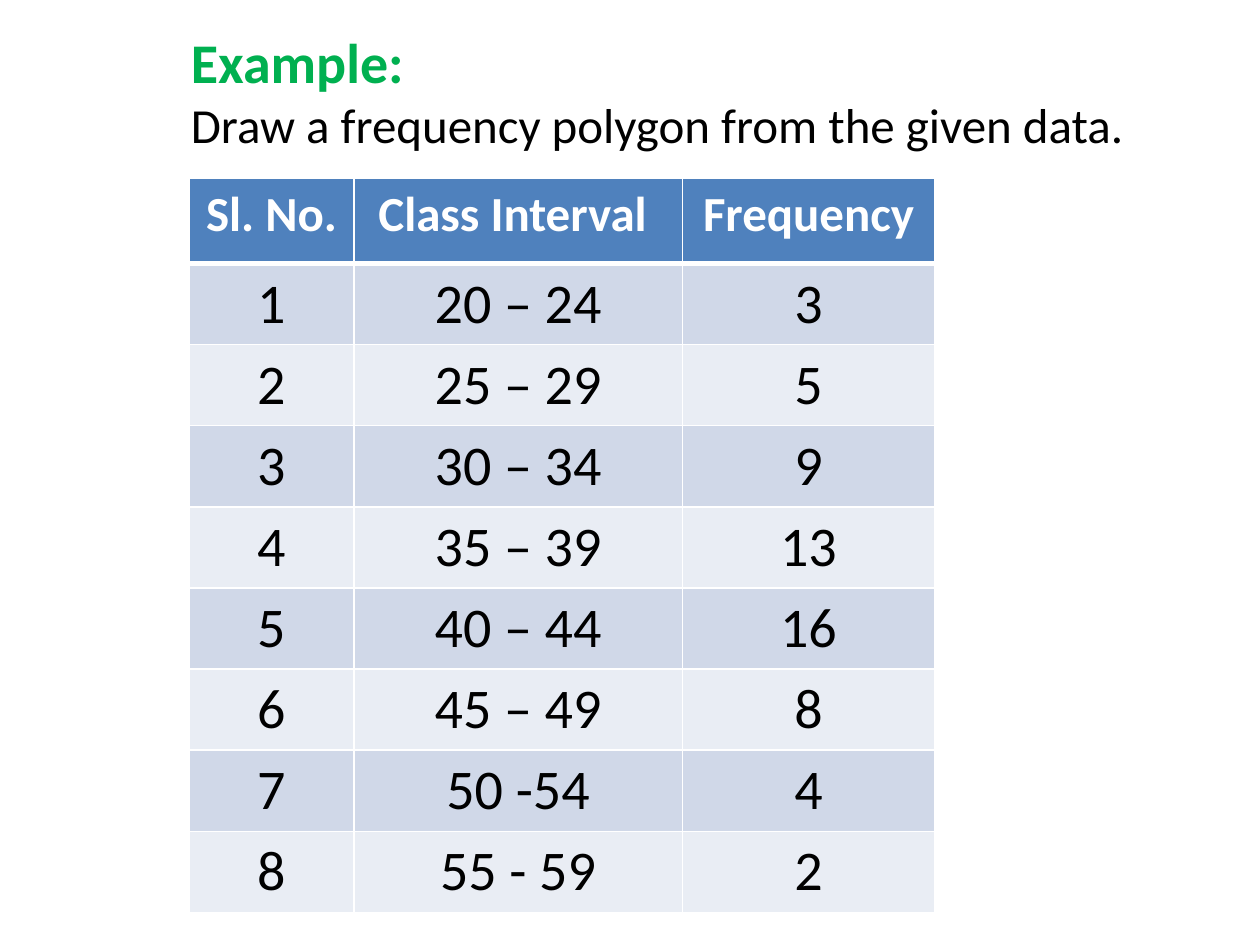
from dataclasses import dataclass

from lxml import etree
from pptx import Presentation
from pptx.dml.color import RGBColor
from pptx.enum.text import PP_ALIGN
from pptx.oxml.ns import qn
from pptx.util import Inches, Pt

CENTER = PP_ALIGN.CENTER
LEFT = PP_ALIGN.LEFT
BLANK_LAYOUT = 6
SLIDE_WIDTH, SLIDE_HEIGHT = Inches(10), Inches(7.5)
GRID_COLUMNS, GRID_ROWS = 120, 90


@dataclass(frozen=True)
class Theme:
    font: str = "Calibri"
    title_size: int = 32
    prompt_size: int = 28
    header_size: int = 28
    body_size: int = 32
    title: str = "00B050"
    text: str = "000000"
    header_text: str = "FFFFFF"
    header_fill: str = "4F81BD"
    band_fills: tuple = ("D0D8E8", "E9EDF4")
    border: str = "FFFFFF"
    border_width: int = 1
    header_rule_width: int = 3


THEME = Theme()

HEADERS = ("Sl. No.", "Class Interval ", "Frequency")
INTERVALS = ("20 – 24", "25 – 29", "30 – 34", "35 – 39",
             "40 – 44", "45 – 49", "50 -54", "55 - 59")
FREQUENCIES = (3, 5, 9, 13, 16, 8, 4, 2)

COLUMN_SPANS = (15.7, 31.3, 24)
HEADER_SPAN, BODY_SPAN = 8.1, 7.1

TITLE_FORMAT = {"size": Pt(THEME.title_size), "bold": True, "color": THEME.title}
PROMPT_FORMAT = {"size": Pt(THEME.prompt_size), "bold": False, "color": THEME.text}
HEADER_FORMAT = {"size": Pt(THEME.header_size), "bold": True, "color": THEME.header_text}
BODY_FORMAT = {"size": Pt(THEME.body_size), "bold": False, "color": THEME.text}


def across(columns):
    return round(SLIDE_WIDTH * columns / GRID_COLUMNS)


def down(rows):
    return round(SLIDE_HEIGHT * rows / GRID_ROWS)


def write(para, text, text_format, alignment=LEFT):
    para.alignment = alignment
    span = para.add_run()
    span.text = text
    span.font.name = THEME.font
    for name, value in text_format.items():
        if name == "color":
            span.font.color.rgb = RGBColor.from_string(value)
        else:
            setattr(span.font, name, value)


def set_borders(cell, widths):
    """Draw cell edges; the line elements must stand before the fill."""
    properties = cell._tc.get_or_add_tcPr()
    for position, (edge, width) in enumerate(widths.items()):
        line = etree.Element(qn(f"a:ln{edge}"), w=str(Pt(width)))
        fill = etree.SubElement(line, qn("a:solidFill"))
        etree.SubElement(fill, qn("a:srgbClr"), val=THEME.border)
        properties.insert(position, line)


def fill_cell(cell, text, fill, text_format, top, bottom):
    write(cell.text_frame.paragraphs[0], text, text_format, CENTER)
    cell.fill.solid()
    cell.fill.fore_color.rgb = RGBColor.from_string(fill)
    side = THEME.border_width
    set_borders(cell, {"L": side, "R": side, "T": top, "B": bottom})


def add_heading(page):
    box = page.shapes.add_textbox(across(17), down(2), across(92), down(13.3))
    frame = box.text_frame
    frame.word_wrap = True
    write(frame.paragraphs[0], "Example:", TITLE_FORMAT)
    write(frame.add_paragraph(), "Draw a frequency polygon from the given data.",
          PROMPT_FORMAT)


def add_frequency_table(page):
    records = [(str(number), interval, str(frequency)) for number, (interval, frequency)
               in enumerate(zip(INTERVALS, FREQUENCIES), start=1)]
    rows = [HEADERS, *records]
    height = HEADER_SPAN + BODY_SPAN * len(records)
    table = page.shapes.add_table(len(rows), len(HEADERS), across(18), down(17),
                                  across(sum(COLUMN_SPANS)), down(height)).table
    for column, columns in zip(table.columns, COLUMN_SPANS):
        column.width = across(columns)

    thin, thick = THEME.border_width, THEME.header_rule_width
    for index, texts in enumerate(rows):
        is_header = index == 0
        table.rows[index].height = down(HEADER_SPAN if is_header else BODY_SPAN)
        fill = THEME.header_fill if is_header else THEME.band_fills[(index - 1) % 2]
        text_format = HEADER_FORMAT if is_header else BODY_FORMAT
        top = thick if index == 1 else thin
        bottom = thick if is_header else thin
        for cell, text in zip(table.rows[index].cells, texts):
            fill_cell(cell, text, fill, text_format, top, bottom)


def main():
    deck = Presentation()
    deck.slide_width, deck.slide_height = SLIDE_WIDTH, SLIDE_HEIGHT
    page = deck.slides.add_slide(deck.slide_layouts[BLANK_LAYOUT])
    add_frequency_table(page)
    add_heading(page)
    deck.save("out.pptx")


if __name__ == "__main__":
    main()
